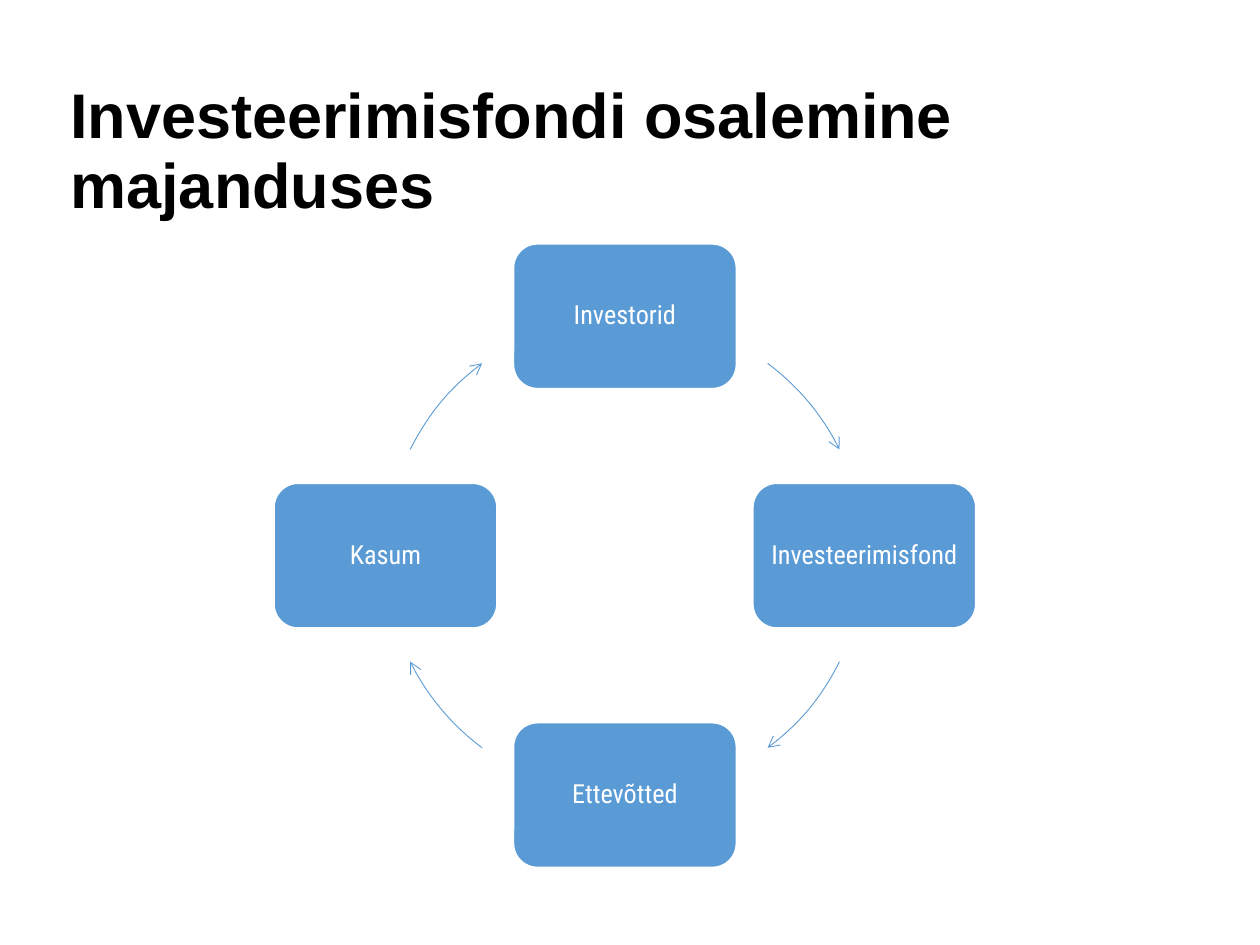
from math import cos, radians, sin
from typing import NamedTuple

from lxml.etree import SubElement
from pptx import Presentation
from pptx.dml.color import RGBColor
from pptx.enum.shapes import MSO_SHAPE as Shape
from pptx.enum.text import MSO_ANCHOR as Anchor, PP_ALIGN as Align
from pptx.oxml.ns import qn
from pptx.util import Inches, Pt

BLUE = RGBColor(0x5B, 0x9B, 0xD5)
WHITE = RGBColor(0xFF, 0xFF, 0xFF)
BLACK = RGBColor(0x00, 0x00, 0x00)

# Cycle geometry in inches; angles run clockwise from the right
CENTER_X, CENTER_Y, RADIUS = 4.96, 4.41, 1.9
BOX_W, BOX_H = 1.77, 1.15


class Step(NamedTuple):
    label: str
    angle: int         # position of the box on the circle
    arrow_start: float  # arc leading to the next box
    arrow_end: float


STEPS = [
    Step("Investorid", 270, 306.6, 333.7),
    Step("Investeerimisfond", 0, 26.3, 53.4),
    Step("Ettevõtted", 90, 126.6, 153.7),
    Step("Kasum", 180, 206.3, 233.4),
]


def write(shape, text: str, *, font: str, size: float, color: RGBColor,
          bold: bool = False, align=Align.LEFT, spacing: float = 0.9,
          insets=(0.06, 0.06, 0.06, 0.06)) -> None:
    """Fill a shape with one formatted, vertically centred paragraph."""
    tf = shape.text_frame
    tf.word_wrap = True
    tf.vertical_anchor = Anchor.MIDDLE
    (tf.margin_left, tf.margin_top,
     tf.margin_right, tf.margin_bottom) = map(Inches, insets)
    p = tf.paragraphs[0]
    p.alignment = align
    p.line_spacing = spacing
    r = p.add_run()
    r.text = text
    r.font.name = font
    r.font.size = Pt(size)
    r.font.bold = bold
    r.font.color.rgb = color


def add_box(s, step: Step) -> None:
    x = CENTER_X + RADIUS * cos(radians(step.angle))
    y = CENTER_Y + RADIUS * sin(radians(step.angle))
    sp = s.shapes.add_shape(
        Shape.ROUNDED_RECTANGLE, Inches(x - BOX_W / 2), Inches(y - BOX_H / 2),
        Inches(BOX_W), Inches(BOX_H))
    sp.shadow.inherit = False
    sp.fill.solid()
    sp.fill.fore_color.rgb = BLUE
    sp.line.color.rgb = WHITE
    sp.line.width = Pt(1)
    write(sp, step.label, font="Roboto Condensed", size=15, color=WHITE,
          align=Align.CENTER)


def add_arrow(s, step: Step) -> None:
    sp = s.shapes.add_shape(
        Shape.ARC, Inches(CENTER_X - RADIUS), Inches(CENTER_Y - RADIUS),
        Inches(2 * RADIUS), Inches(2 * RADIUS))
    # Arc angles are stored in 60000ths of a degree, adjustments in 100000ths
    sp.adjustments[0] = step.arrow_start * 0.6
    sp.adjustments[1] = step.arrow_end * 0.6
    sp.shadow.inherit = False
    sp.fill.background()
    sp.line.color.rgb = BLUE
    sp.line.width = Pt(0.5)
    ln = sp.line._get_or_add_ln()
    SubElement(ln, qn("a:tailEnd"), type="arrow")


def main() -> None:
    prs = Presentation()
    prs.slide_width, prs.slide_height = Inches(10), Inches(7.5)
    s = prs.slides.add_slide(prs.slide_layouts[6])

    # Title
    title = s.shapes.add_textbox(Inches(0.56), Inches(0.59),
                                 Inches(8.8), Inches(1.18))
    write(title, "Investeerimisfondi osalemine majanduses", font="Arial",
          size=36, color=BLACK, bold=True, spacing=0.92,
          insets=(0, 0.06, 0, 0))

    # Cycle of boxes and arrows
    for step in STEPS:
        add_box(s, step)
        add_arrow(s, step)

    prs.save("out.pptx")


if __name__ == "__main__":
    main()
